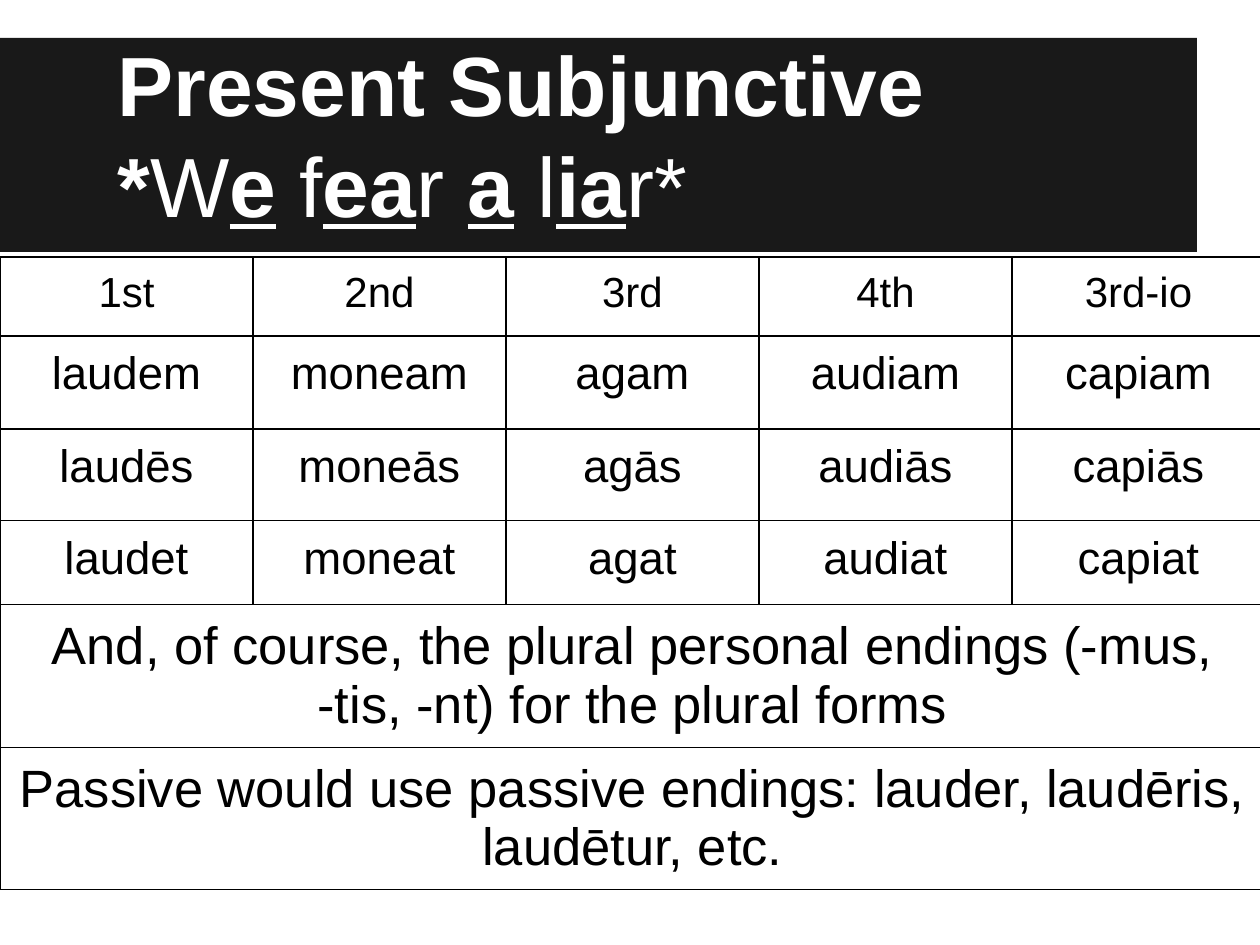
"""Build a Latin grammar slide on the present subjunctive."""
from lxml import etree
from pptx import Presentation
from pptx.dml.color import RGBColor
from pptx.enum.shapes import MSO_SHAPE
from pptx.enum.text import MSO_ANCHOR, MSO_AUTO_SIZE, PP_ALIGN
from pptx.oxml.ns import qn
from pptx.util import Pt

FONT = "Arial"
BLACK, WHITE, BAND = "000000", "FFFFFF", "191919"
TITLE_LINES = [
    [("Present Subjunctive", True, False)],
    [("*", True, False), ("W", False, False), ("e", True, True),
     (" f", False, False), ("ea", True, True), ("r ", False, False),
     ("a", True, True), (" l", False, False), ("ia", True, True),
     ("r*", False, False)],
]
CONJUGATIONS = [
    ("1st", "2nd", "3rd", "4th", "3rd-io"),
    ("laudem", "moneam", "agam", "audiam", "capiam"),
    ("laudēs", "moneās", "agās", "audiās", "capiās"),
    ("laudet", "moneat", "agat", "audiat", "capiat"),
]
NOTES = [
    ("And, of course, the plural personal endings (-mus, -tis, -nt) for the plural forms",),
    ("Passive would use passive endings: lauder, laudēris, laudētur, etc.",),
]
ROW_HEIGHTS = [79, 93, 92, 84, 120, 120]
ROW_SIZES = [24, 26, 26, 26, 30, 30]
COLUMN_WIDTH = 253


def px(length):
    return round(length * 914400 / 126)


def color(value):
    return RGBColor.from_string(value)


def style(run, size, ink, bold=False, underline=False):
    font = run.font
    font.name, font.size = FONT, Pt(size)
    font.bold, font.underline = bold, underline
    font.color.rgb = color(ink)


def set_insets(frame):
    frame.margin_left = frame.margin_right = px(12.6)
    frame.margin_top = frame.margin_bottom = px(12.6)


def add_borders(cell):
    properties = cell._tc.get_or_add_tcPr()
    for position, side in enumerate(("lnL", "lnR", "lnT", "lnB")):
        border = etree.Element(qn(f"a:{side}"), w=str(Pt(0.75)))
        fill = etree.SubElement(border, qn("a:solidFill"))
        etree.SubElement(fill, qn("a:srgbClr"), val=BLACK)
        properties.insert(position, border)


def add_band(slide):
    band = slide.shapes.add_shape(MSO_SHAPE.RECTANGLE, 0, px(38), px(1197), px(214))
    band.shadow.inherit = False
    band.fill.solid()
    band.fill.fore_color.rgb = color(BAND)
    band.line.fill.background()
    slide.shapes._spTree.insert(2, band._element)


def fill_title(title):
    title.left, title.top, title.width, title.height = map(px, (63, 38, 1134, 209))
    frame = title.text_frame
    set_insets(frame)
    frame.word_wrap = True
    frame.auto_size = MSO_AUTO_SIZE.NONE
    frame.vertical_anchor = MSO_ANCHOR.BOTTOM
    frame.text = "\n".join("" for _ in TITLE_LINES)
    for paragraph, pieces in zip(frame.paragraphs, TITLE_LINES):
        paragraph.alignment = PP_ALIGN.LEFT
        paragraph._p.get_or_add_pPr().set("indent", str(px(42)))
        for text, bold, underline in pieces:
            run = paragraph.add_run()
            run.text = text
            style(run, 48, WHITE, bold, underline)


def add_forms(slide):
    rows = CONJUGATIONS + NOTES
    columns = len(CONJUGATIONS[0])
    forms = slide.shapes.add_table(
        len(rows), columns, 0, px(257), px(COLUMN_WIDTH * columns), px(sum(ROW_HEIGHTS))
    ).table
    forms.first_row = forms.horz_banding = False
    for column in forms.columns:
        column.width = px(COLUMN_WIDTH)
    for index, (texts, height, size) in enumerate(zip(rows, ROW_HEIGHTS, ROW_SIZES)):
        forms.rows[index].height = px(height)
        for cell in forms.rows[index].cells:
            cell.fill.background()
            add_borders(cell)
        if len(texts) == 1:
            forms.cell(index, 0).merge(forms.cell(index, columns - 1))
        for position, text in enumerate(texts):
            cell = forms.cell(index, position)
            set_insets(cell)
            cell.text_frame.text = text
            paragraph = cell.text_frame.paragraphs[0]
            paragraph.alignment = PP_ALIGN.CENTER
            style(paragraph.runs[0], size, BLACK)


def main():
    deck = Presentation()
    deck.slide_width, deck.slide_height = px(1260), px(945)
    slide = deck.slides.add_slide(deck.slide_layouts[5])
    add_band(slide)
    fill_title(slide.shapes.title)
    add_forms(slide)
    deck.save("out.pptx")


if __name__ == "__main__":
    main()
